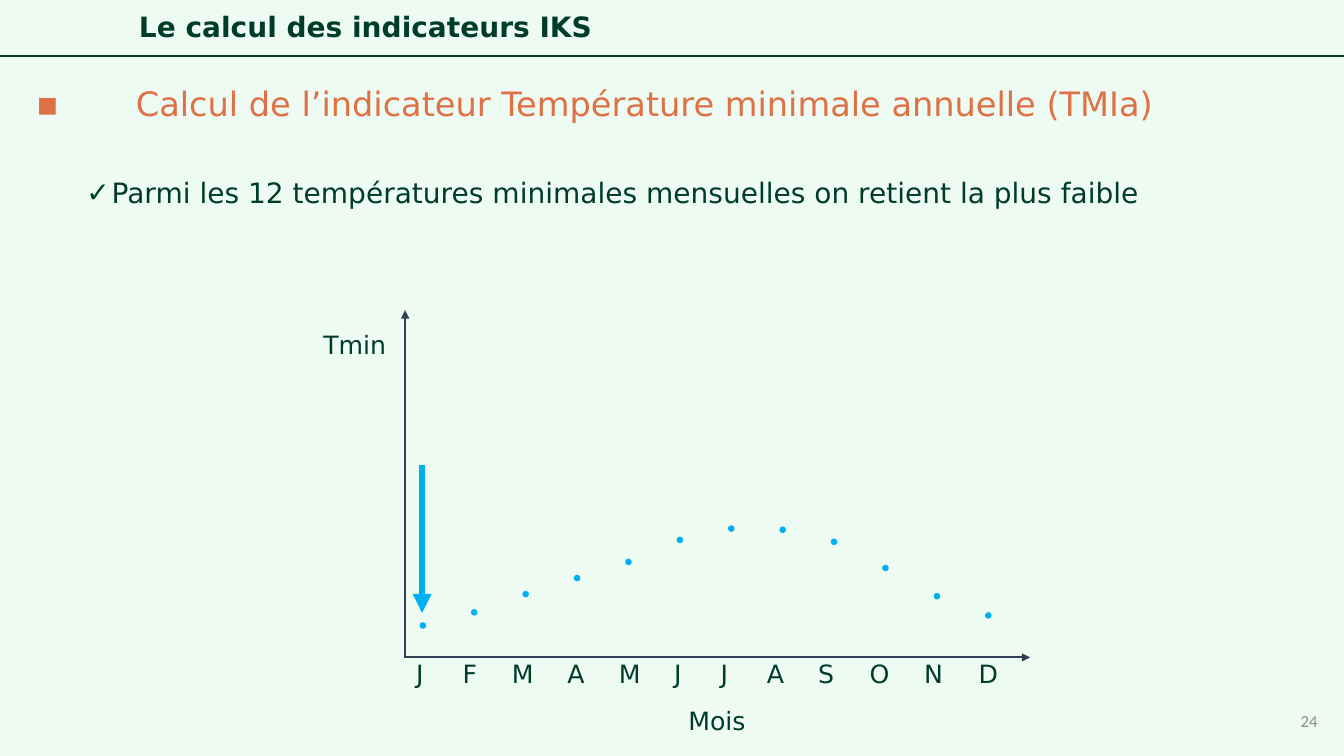
from pptx import Presentation
from pptx.dml.color import RGBColor
from pptx.enum.shapes import MSO_CONNECTOR, MSO_SHAPE
from pptx.enum.text import MSO_ANCHOR, MSO_AUTO_SIZE, PP_ALIGN
from pptx.oxml.ns import qn
from pptx.util import Pt
from lxml import etree

STRAIGHT = MSO_CONNECTOR.STRAIGHT
OVAL = MSO_SHAPE.OVAL
TOP, MIDDLE = MSO_ANCHOR.TOP, MSO_ANCHOR.MIDDLE
LEFT, RIGHT = PP_ALIGN.LEFT, PP_ALIGN.RIGHT
GROW = MSO_AUTO_SIZE.SHAPE_TO_FIT_TEXT

MINT = RGBColor(0xEE, 0xFB, 0xF2)
GREEN = RGBColor(0x00, 0x3C, 0x2B)
ORANGE = RGBColor(0xDE, 0x72, 0x46)
SLATE = RGBColor(0x32, 0x40, 0x55)
BLUE = RGBColor(0x00, 0xB0, 0xF0)
GRAY = RGBColor(0x8C, 0x8C, 0x8C)

MONTHS = "JFMAMJJASOND"
LETTER_WIDTH = {"J": 23, "F": 25.2, "M": 29.5, "A": 26.6, "S": 26.6,
                "O": 28.8, "N": 28.8, "D": 28.8}
LETTER_GAP = 10.1
DOT_TOPS = [445, 435.6, 422.6, 411.1, 399.6, 383.8,
            375.8, 376.6, 385.2, 403.9, 424.1, 437.8]
DOT_SIZE, DOT_LEFT, DOT_STEP = 3.6, 300.24, 36.72


class SlideBuilder:
    font = "DejaVu Sans"

    def __init__(self, prs):
        self.s = prs.slides.add_slide(prs.slide_layouts[6])
        fill = self.s.background.fill
        fill.solid()
        fill.fore_color.rgb = MINT

    def run(self, p, text, size, color, bold=False, font=None):
        r = p.add_run()
        r.text = text
        r.font.name = font or self.font
        r.font.size = Pt(size)
        r.font.bold = bold
        r.font.color.rgb = color

    def box(self, x, y, w, h, anchor=TOP, wrap=True):
        tf = self.s.shapes.add_textbox(Pt(x), Pt(y), Pt(w), Pt(h)).text_frame
        tf.word_wrap = wrap
        tf.vertical_anchor = anchor
        return tf

    def label(self, text, x, y, w, wrap=True):
        tf = self.box(x, y, w, 28.8, wrap=wrap)
        tf.auto_size = GROW
        self.run(tf.paragraphs[0], text, 18, GREEN)

    def bullet(self, p, char, margin, hanging):
        pPr = p._p.get_or_add_pPr()
        pPr.set("marL", str(Pt(margin)))
        pPr.set("indent", str(-Pt(hanging)))
        etree.SubElement(pPr, qn("a:buFont")).set("typeface", self.font)
        etree.SubElement(pPr, qn("a:buChar")).set("char", char)
        p.line_spacing = 0.9

    def line(self, x1, y1, x2, y2, color, width, arrow=True):
        c = self.s.shapes.add_connector(STRAIGHT, Pt(x1), Pt(y1), Pt(x2), Pt(y2))
        c.line.color.rgb = color
        c.line.width = Pt(width)
        spPr = c.element.spPr
        if arrow:
            ln = spPr.find(qn("a:ln"))
            etree.SubElement(ln, qn("a:tailEnd")).set("type", "triangle")
        etree.SubElement(spPr, qn("a:effectLst"))

    def dot(self, x, y):
        sp = self.s.shapes.add_shape(OVAL, Pt(x), Pt(y), Pt(DOT_SIZE), Pt(DOT_SIZE))
        sp.shadow.inherit = False
        sp.fill.solid()
        sp.fill.fore_color.rgb = BLUE
        sp.line.color.rgb = BLUE
        sp.line.width = Pt(1)


def add_heading(b):
    b.line(0, 39.9, 960, 39.9, GREEN, 1.5, arrow=False)
    p = b.box(92.2, 5.8, 828, 28.8, MIDDLE).paragraphs[0]
    p.line_spacing = 0.9
    b.run(p, "Le calcul des indicateurs IKS", 20, GREEN, bold=True)


def add_body(b):
    tf = b.box(18.7, 59, 941, 147)
    p = tf.paragraphs[0]
    b.bullet(p, "▪", 71.3, 71.3)
    b.run(p, "Calcul de l’indicateur Température minimale annuelle (TMIa)", 24, ORANGE)
    p = tf.add_paragraph()
    b.bullet(p, "✓", 54, 18)
    p.space_before = Pt(40)
    b.run(p, "Parmi les 12 températures minimales mensuelles on retient la plus faible",
          20, GREEN)


def add_temperature_plot(b):
    b.line(289.4, 469.6, 289.4, 221.6, SLATE, 1.5)
    b.line(288.8, 469.6, 735.8, 469.6, SLATE, 1.5)
    for i, top in enumerate(DOT_TOPS):
        b.dot(DOT_LEFT + i * DOT_STEP, top)
    x = 290.2
    for month in MONTHS:
        b.label(month, x, 466.6, LETTER_WIDTH[month], wrap=False)
        x += LETTER_WIDTH[month] + LETTER_GAP
    b.label("Mois", 484.6, 500.4, 55.4)
    b.label("Tmin", 223.9, 231.8, 88.6)
    b.line(301.5, 332.4, 301.5, 437.8, BLUE, 4.5)


def add_slide_number(b):
    p = b.box(732.2, 500.4, 216, 28.8, MIDDLE).paragraphs[0]
    p.alignment = RIGHT
    b.run(p, "24", 12, GRAY, font="Calibri")


def main():
    prs = Presentation()
    prs.slide_width, prs.slide_height = Pt(960), Pt(540)
    b = SlideBuilder(prs)
    add_heading(b)
    add_body(b)
    add_temperature_plot(b)
    add_slide_number(b)
    prs.save("out.pptx")


if __name__ == "__main__":
    main()
